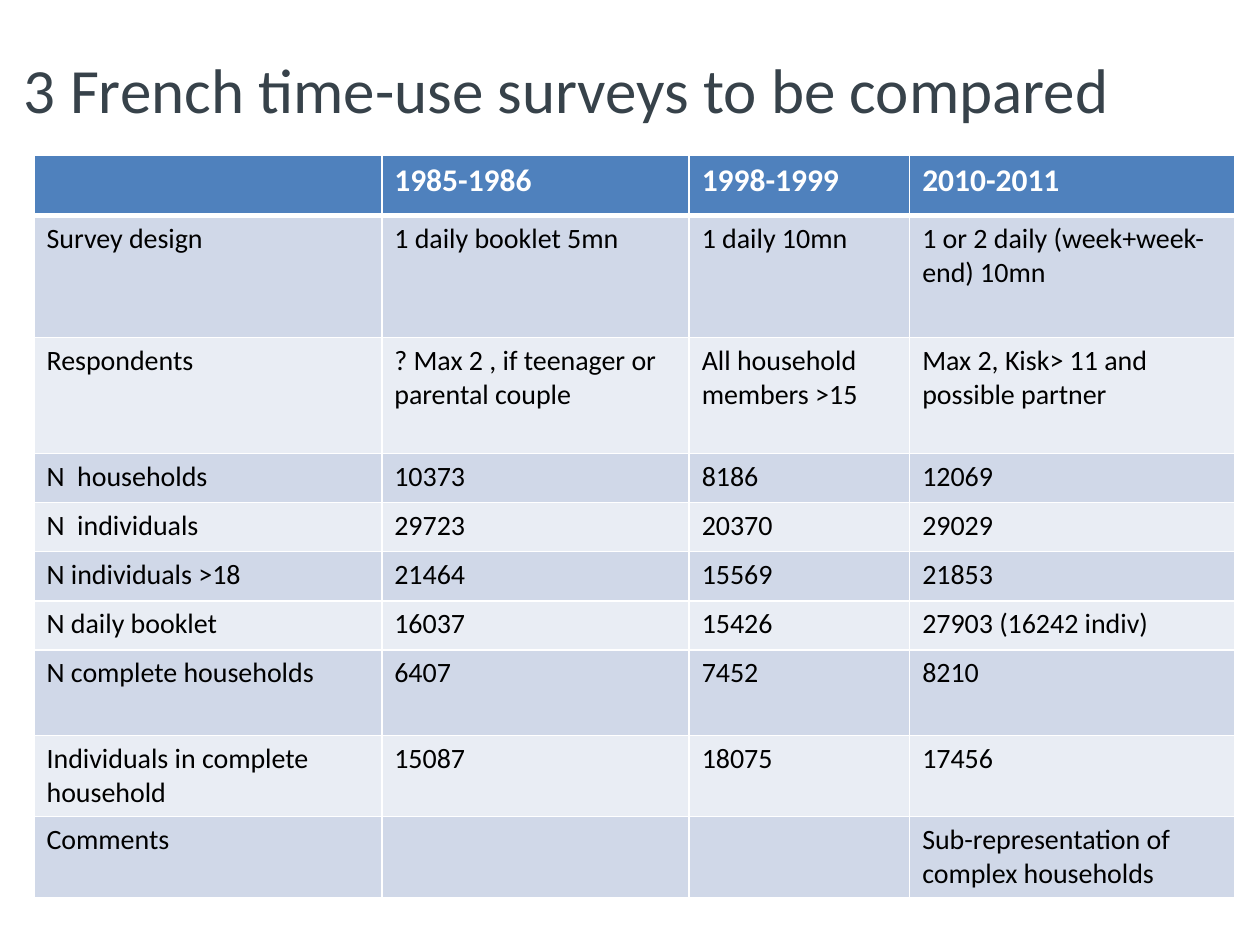
import dataclasses

import lxml.etree
import pptx
import pptx.dml.color
import pptx.enum.shapes
import pptx.enum.text
import pptx.oxml.ns
import pptx.util

Inches = pptx.util.Inches


@dataclasses.dataclass(frozen=True)
class Theme:
    font: str = "Calibri"
    title_color: str = "37424A"
    header_fill: str = "4F81BD"
    header_text: str = "FFFFFF"
    body_text: str = "000000"
    band_fills: tuple = ("D0D8E8", "E9EDF4")
    border: str = "FFFFFF"
    title_size: int = 36
    header_size: int = 18
    body_size: int = 16


TITLE = "3 French time-use surveys to be compared"
COLUMN_WIDTHS = (2.76, 2.44, 1.75, 2.58)
ROW_HEIGHTS = (0.48, 0.97, 0.92, 0.39, 0.39, 0.39, 0.39, 0.68, 0.64, 0.64)
SURVEYS = (
    ("", "1985-1986", "1998-1999", "2010-2011"),
    ("Survey design", "1 daily booklet 5mn", "1 daily 10mn",
     "1 or 2 daily (week+week-end) 10mn"),
    ("Respondents", "? Max 2 , if teenager or parental couple",
     "All household members >15", "Max 2, Kisk> 11 and possible partner"),
    ("N  households", "10373", "8186", "12069"),
    ("N  individuals", "29723", "20370", "29029"),
    ("N individuals >18", "21464", "15569", "21853"),
    ("N daily booklet", "16037", "15426", "27903 (16242 indiv)"),
    ("N complete households", "6407", "7452", "8210"),
    ("Individuals in complete household", "15087", "18075", "17456"),
    ("Comments", "", "", "Sub-representation of complex households"),
)


class SlideBuilder:
    """Holds the theme and the current slide."""

    def __init__(self, slide, theme):
        self.slide = slide
        self.theme = theme

    def color(self, value):
        return pptx.dml.color.RGBColor.from_string(value)

    def format_runs(self, frame, size, color, bold=False):
        for para in frame.paragraphs:
            for span in para.runs:
                span.font.name = self.theme.font
                span.font.size = pptx.util.Pt(size)
                span.font.bold = bold
                span.font.color.rgb = self.color(color)

    def title(self, text, left, top, width, height):
        box = self.slide.shapes.title
        box.left, box.top = Inches(left), Inches(top)
        box.width, box.height = Inches(width), Inches(height)
        frame = box.text_frame
        frame.text = text
        frame.word_wrap = True
        frame.auto_size = pptx.enum.text.MSO_AUTO_SIZE.NONE
        frame.vertical_anchor = pptx.enum.text.MSO_ANCHOR.MIDDLE
        frame.margin_left = 0
        frame.paragraphs[0].alignment = pptx.enum.text.PP_ALIGN.LEFT
        self.format_runs(frame, self.theme.title_size, self.theme.title_color)

    def rule(self, left, right, top):
        line = self.slide.shapes.add_connector(
            pptx.enum.shapes.MSO_CONNECTOR.STRAIGHT,
            Inches(left), Inches(top), Inches(right), Inches(top))
        line.line.color.rgb = self.color(self.theme.title_color)
        line.line.width = pptx.util.Pt(0.5)
        lxml.etree.SubElement(line._element.spPr, pptx.oxml.ns.qn("a:effectLst"))

    def cell_borders(self, cell, bottom_width):
        """Add the four cell borders ahead of the fill, as the schema asks."""
        qn = pptx.oxml.ns.qn
        properties = cell._tc.get_or_add_tcPr()
        widths = {"a:lnL": 1, "a:lnR": 1, "a:lnT": 1, "a:lnB": bottom_width}
        for position, (tag, width) in enumerate(widths.items()):
            line = lxml.etree.Element(qn(tag), w=str(pptx.util.Pt(width)))
            fill = lxml.etree.SubElement(line, qn("a:solidFill"))
            lxml.etree.SubElement(fill, qn("a:srgbClr"), val=self.theme.border)
            properties.insert(position, line)

    def table(self, rows, left, top, widths, heights):
        theme = self.theme
        table = self.slide.shapes.add_table(
            len(rows), len(widths), Inches(left), Inches(top),
            Inches(sum(widths)), Inches(sum(heights))).table
        for column, width in zip(table.columns, widths):
            column.width = Inches(width)
        for index, (row, height, texts) in enumerate(zip(table.rows, heights, rows)):
            row.height = Inches(height)
            header = index == 0
            fill = theme.header_fill if header else theme.band_fills[(index - 1) % 2]
            size = theme.header_size if header else theme.body_size
            color = theme.header_text if header else theme.body_text
            for cell, text in zip(row.cells, texts):
                cell.text_frame.text = text
                self.format_runs(cell.text_frame, size, color, bold=header)
                cell.fill.solid()
                cell.fill.fore_color.rgb = self.color(fill)
                self.cell_borders(cell, 3 if header else 1)


def main():
    deck = pptx.Presentation()
    deck.slide_width, deck.slide_height = Inches(10), Inches(7.5)
    title_only = deck.slide_layouts[5]
    page = SlideBuilder(deck.slides.add_slide(title_only), Theme())

    # Heading and the rule under it
    page.title(TITLE, 0.19, 0.2, 9.06, 1.01)
    page.rule(0.51, 9.49, 1.31)

    # Survey comparison table
    page.table(SURVEYS, 0.27, 1.23, COLUMN_WIDTHS, ROW_HEIGHTS)

    deck.save("out.pptx")


if __name__ == "__main__":
    main()
